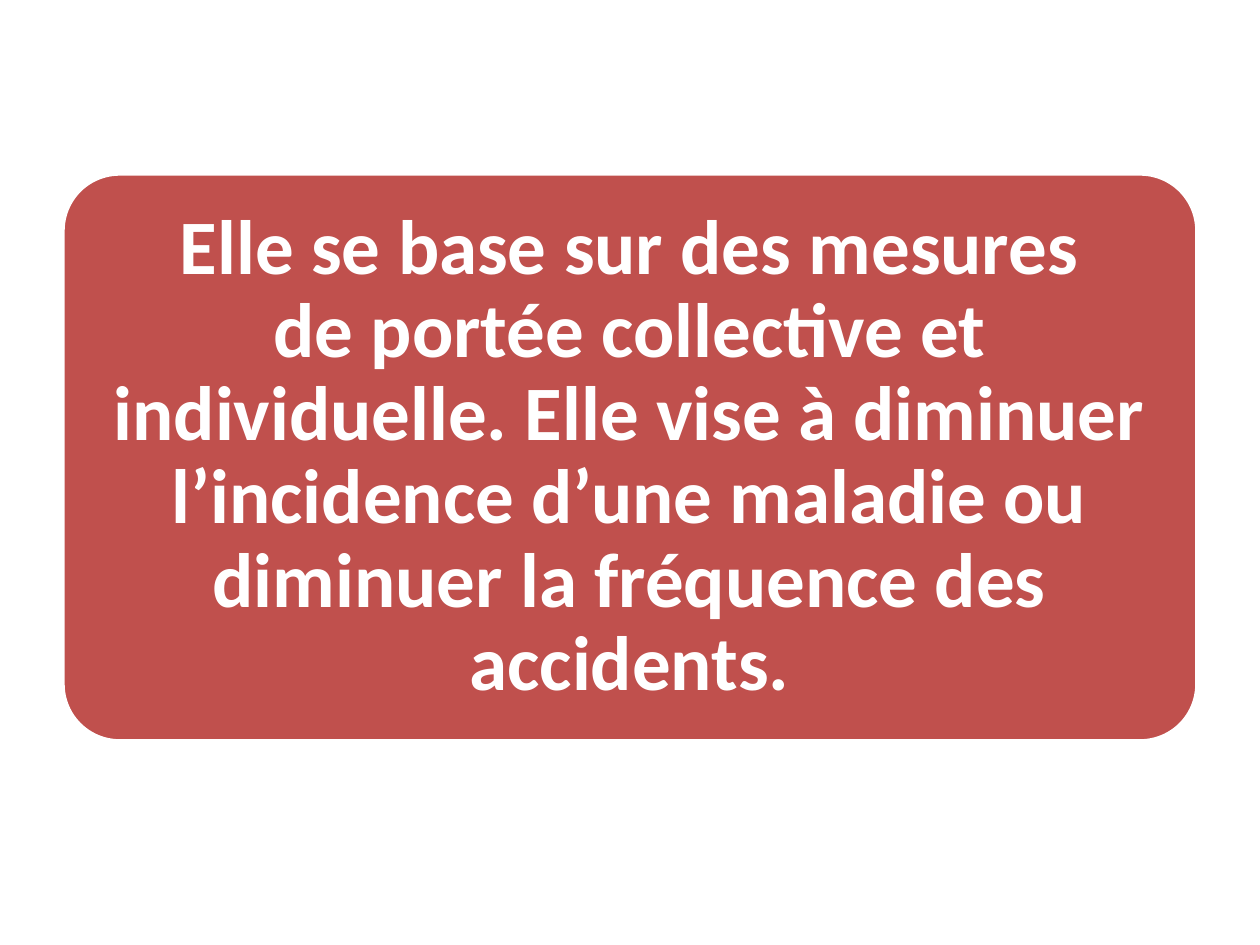
from pptx import Presentation
from pptx.dml.color import RGBColor
from pptx.enum.shapes import MSO_SHAPE
from pptx.enum.text import MSO_ANCHOR, PP_ALIGN
from pptx.util import Pt

ROUNDED = MSO_SHAPE.ROUNDED_RECTANGLE
MIDDLE = MSO_ANCHOR.MIDDLE
CENTER = PP_ALIGN.CENTER

SLIDE_WIDTH, SLIDE_HEIGHT = 720, 540
DEFINITION = (
    "Elle se base sur des mesures\n"
    "de portée collective et individuelle. Elle vise à diminuer "
    "l’incidence d’une maladie ou diminuer la fréquence des accidents."
)


def color(hex_string):
    return RGBColor.from_string(hex_string)


class SlideBuilder:
    font_name = "Calibri"
    font_size = 44
    red = "C0504D"
    white = "FFFFFF"

    def __init__(self, slide):
        self.slide = slide

    def card(self, text, left, top, width, height):
        """Add a rounded panel with bold centred text."""
        shape = self.slide.shapes.add_shape(
            ROUNDED, Pt(left), Pt(top), Pt(width), Pt(height))
        shape.adjustments[0] = 0.1
        shape.shadow.inherit = False
        shape.fill.solid()
        shape.fill.fore_color.rgb = color(self.red)
        shape.line.color.rgb = color(self.white)
        shape.line.width = Pt(2)

        frame = shape.text_frame
        frame.word_wrap = True
        frame.vertical_anchor = MIDDLE
        frame.margin_left = frame.margin_right = Pt(6.6)
        frame.margin_top = frame.margin_bottom = Pt(4.4)

        paragraph = frame.paragraphs[0]
        paragraph.text = text
        paragraph.alignment = CENTER
        paragraph.line_spacing = 0.9
        font = paragraph.font
        font.name = self.font_name
        font.size = Pt(self.font_size)
        font.bold = True
        font.color.rgb = color(self.white)


def main():
    presentation = Presentation()
    presentation.slide_width = Pt(SLIDE_WIDTH)
    presentation.slide_height = Pt(SLIDE_HEIGHT)
    slide = presentation.slides.add_slide(presentation.slide_layouts[6])
    margin = 36
    SlideBuilder(slide).card(
        DEFINITION, margin, 99.4, SLIDE_WIDTH - 2 * margin, 324)
    presentation.save("out.pptx")


if __name__ == "__main__":
    main()
